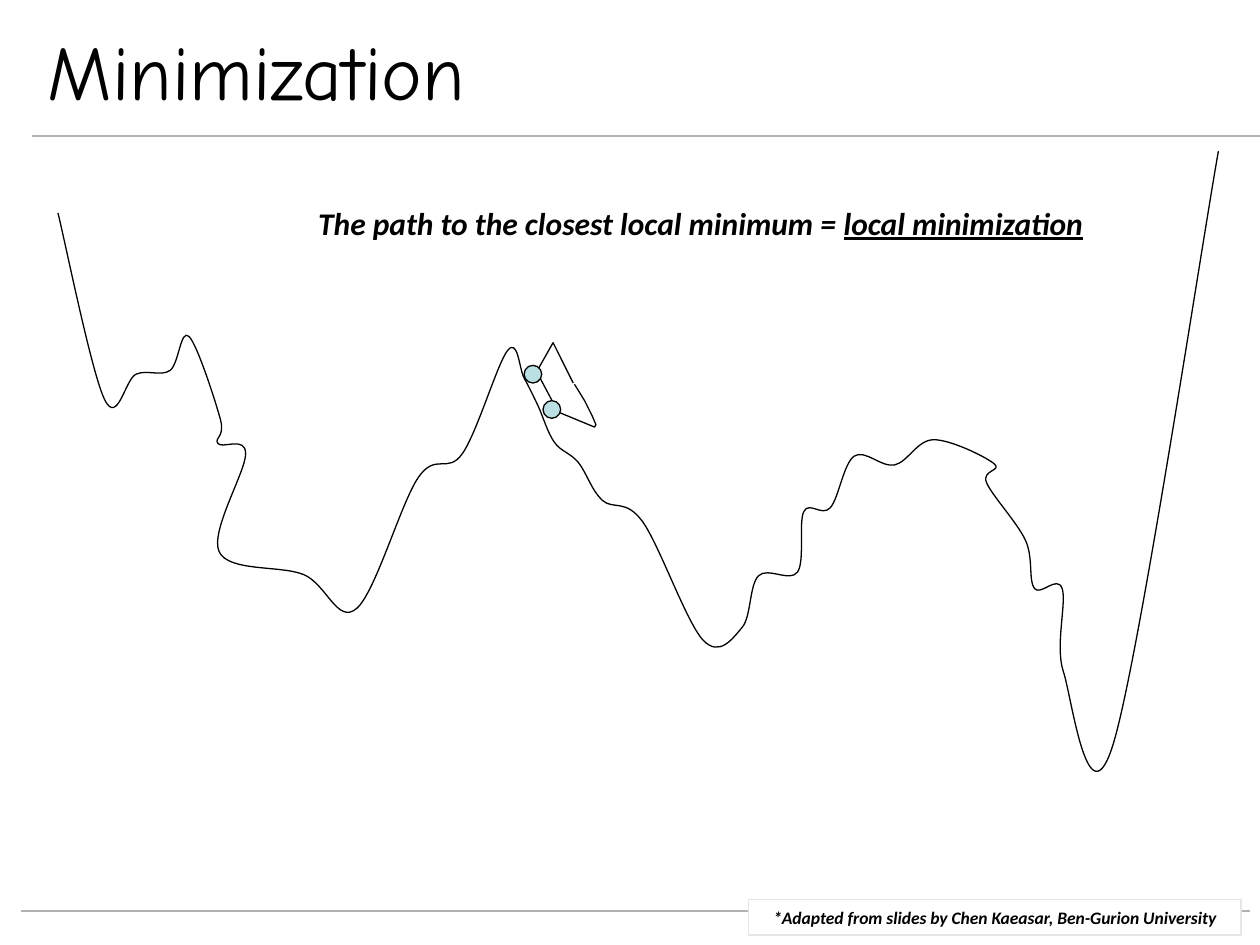
from pptx import Presentation
from pptx.dml.color import RGBColor
from pptx.enum.shapes import MSO_CONNECTOR, MSO_SHAPE
from pptx.enum.text import MSO_ANCHOR, PP_ALIGN
from pptx.oxml.ns import qn
from pptx.oxml.xmlchemy import OxmlElement as make_element
from pptx.util import Inches, Pt

COLORS = {"ink": "000000", "rule": "B2B2B2", "ball": "BBE0E3",
          "paper": "FFFFFF", "edge": "E6E6E6"}
LANDSCAPE = [
    (0.46, 1.69), (0.83, 3.17), (1.08, 2.97), (1.35, 2.94), (1.5, 2.67),
    (1.75, 3.33), (1.73, 3.52), (1.95, 3.6), (1.74, 4.38), (2.41, 4.56),
    (2.83, 4.83), (3.32, 3.79), (3.67, 3.6), (4.03, 2.78), (4.16, 3),
    (4.27, 3.22), (4.4, 3.51), (4.59, 3.67), (4.78, 3.97), (5.1, 4.14),
    (5.58, 5.08), (5.89, 4.98), (6.02, 4.57), (6.33, 4.54), (6.38, 4.06),
    (6.59, 4.03), (6.78, 3.62), (7.1, 3.69), (7.41, 3.49), (7.89, 3.68),
    (7.83, 3.83), (8.14, 4.29), (8.21, 4.67), (8.43, 4.67), (8.44, 5.33),
    (8.84, 5.89), (9.67, 1.2)]
STEP_OUTLINE = [
    (4.56, 3.05), (4.64, 3.18), (4.7, 3.3), (4.73, 3.37), (4.72, 3.39),
    (4.43, 3.27), (4.26, 2.95), (4.39, 2.72), (4.52, 2.98), (4.55, 3.04)]
BALLS = [(4.38, 3.25), (4.23, 2.97)]
BALL_SIZE = 0.14
NOTE = {"name": "Calibri", "bold": True, "italic": True}


def color(name):
    return RGBColor.from_string(COLORS[name])


def style_line(shape, name, width):
    shape.line.color.rgb = color(name)
    shape.line.width = Pt(width)


def add_rule(page, left, top, width):
    rule = page.shapes.add_connector(
        MSO_CONNECTOR.STRAIGHT, Inches(left), Inches(top),
        Inches(left + width), Inches(top))
    style_line(rule, "rule", 1.5)
    rule._element.spPr.append(make_element("a:effectLst"))


def add_outline(page, points):
    """Draw an open, unfilled line through points given in inches."""
    nodes = [(Inches(x), Inches(y)) for x, y in points]
    builder = page.shapes.build_freeform(*nodes[0])
    builder.add_line_segments(nodes[1:], close=False)
    outline = builder.convert_to_shape()
    outline.shadow.inherit = False
    outline.fill.background()
    style_line(outline, "ink", 0.75)
    return outline


def smooth_outline(outline):
    """Turn the straight segments into a Catmull-Rom curve."""
    spots = list(outline._element.iter(qn("a:pt")))
    nodes = [(int(spot.get("x")), int(spot.get("y"))) for spot in spots]
    padded = [nodes[0], *nodes, nodes[-1]]
    slopes = [((after[0] - before[0]) / 6, (after[1] - before[1]) / 6)
              for before, after in zip(padded, padded[2:])]
    for i, segment in enumerate(list(outline._element.iter(qn("a:lnTo")))):
        (x1, y1), (x2, y2) = nodes[i:i + 2]
        (dx1, dy1), (dx2, dy2) = slopes[i:i + 2]
        curve = make_element("a:cubicBezTo")
        for x, y in ((x1 + dx1, y1 + dy1), (x2 - dx2, y2 - dy2), (x2, y2)):
            spot = make_element("a:pt")
            spot.set("x", str(round(x)))
            spot.set("y", str(round(y)))
            curve.append(spot)
        segment.getparent().replace(segment, curve)


def add_shape(page, kind, area, fill, edge):
    shape = page.shapes.add_shape(kind, *map(Inches, area))
    shape.shadow.inherit = False
    shape.fill.solid()
    shape.fill.fore_color.rgb = color(fill)
    style_line(shape, edge, 0.75)
    return shape


def write(box, spans, align, wrap=True):
    """Fill the box with one paragraph of (text, format) spans."""
    frame = box.text_frame
    frame.word_wrap = wrap
    frame.vertical_anchor = MSO_ANCHOR.MIDDLE
    para = frame.paragraphs[0]
    para.alignment = align
    for text, values in spans:
        span = para.add_run()
        span.text = text
        span.font.color.rgb = color("ink")
        for key, value in values.items():
            setattr(span.font, key, value)


def add_text(page, area, spans, align, wrap=True):
    box = page.shapes.add_textbox(*map(Inches, area))
    write(box, spans, align, wrap)


def main():
    deck = Presentation()
    deck.slide_width, deck.slide_height = Inches(10), Inches(7.5)
    page = deck.slides.add_slide(deck.slide_layouts[6])

    add_rule(page, 0.25, 1.08, 9.75)
    add_rule(page, 0.17, 7.23, 9.75)
    smooth_outline(add_outline(page, LANDSCAPE))
    add_outline(page, STEP_OUTLINE)
    for x, y in BALLS:
        area = (x - BALL_SIZE / 2, y - BALL_SIZE / 2, BALL_SIZE, BALL_SIZE)
        add_shape(page, MSO_SHAPE.OVAL, area, "ball", "ink")

    credit = add_shape(page, MSO_SHAPE.RECTANGLE, (5.94, 7.14, 3.91, 0.28),
                       "paper", "edge")
    write(credit,
          [("*Adapted from slides by Chen Kaeasar, Ben-Gurion University",
            {**NOTE, "size": Pt(10)})], PP_ALIGN.CENTER)
    caption = {**NOTE, "size": Pt(18)}
    add_text(page, (2.4, 1.57, 6.32, 0.4),
             [("The path to the closest local minimum = ", caption),
              ("local minimization", {**caption, "underline": True})],
             PP_ALIGN.CENTER, wrap=False)
    add_text(page, (0.28, 0.21, 9, 0.68),
             [("Minimization", {"name": "Comic Neue", "size": Pt(44)})],
             PP_ALIGN.LEFT)
    deck.save("out.pptx")


if __name__ == "__main__":
    main()
